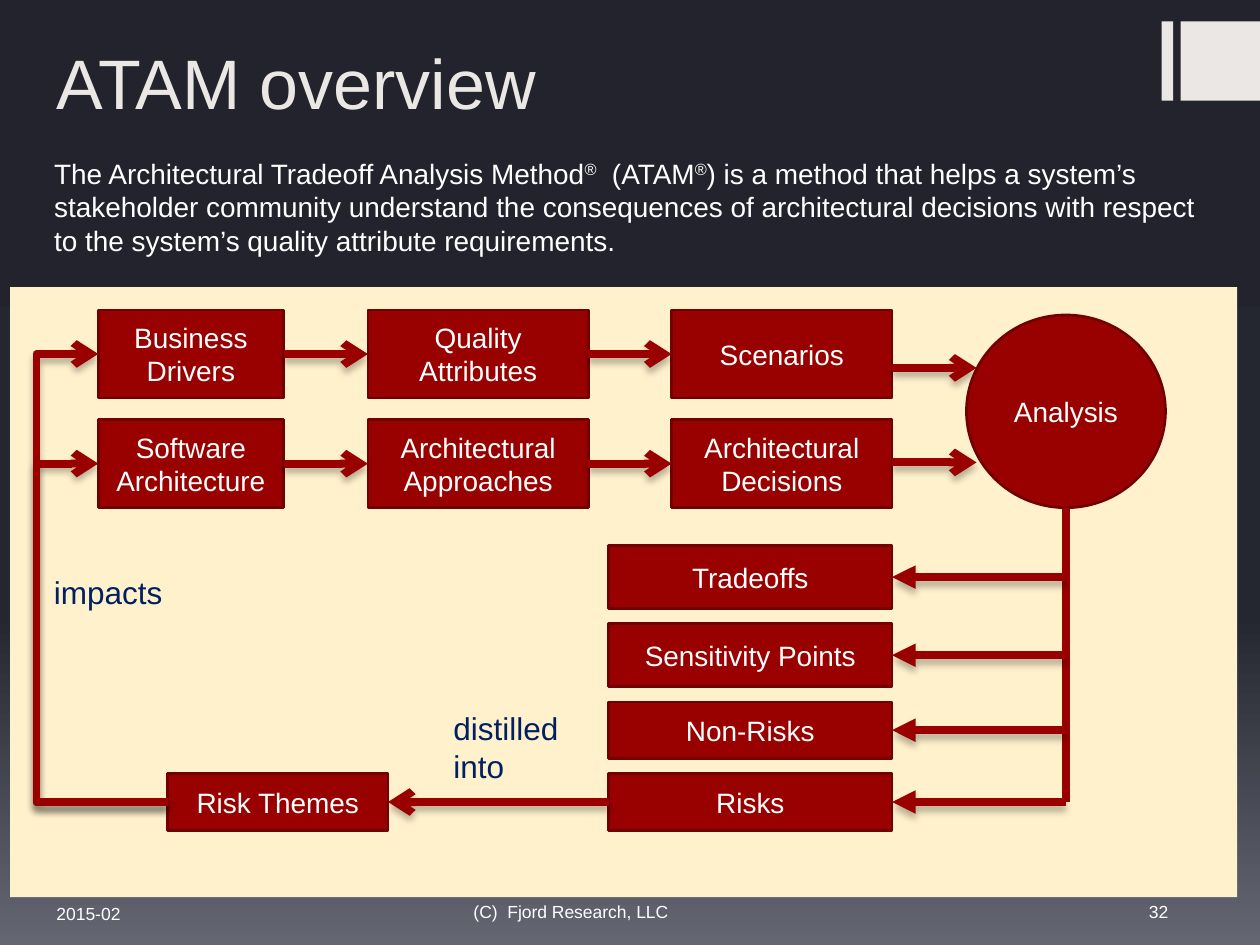
from dataclasses import dataclass

from lxml import etree
from pptx import Presentation
from pptx.dml.color import RGBColor
from pptx.enum import shapes, text
from pptx.oxml.ns import qn
from pptx.util import Inches, Pt

COLORS = {
    "light": "EAE7E4", "white": "FFFFFF", "panel": "FFF1CC", "box": "990000",
    "border": "710000", "label": "002060", "shadow": "000000",
}
BACKGROUND_STOPS = [(0, "22232C"), (65, "242630"), (100, "646671"), ]
FONT = "Arial"
TOP, LEFT, BOTTOM, RIGHT = range(4)


@dataclass
class Node:
    label: str
    left: float
    top: float
    width: float
    height: float
    kind: int = shapes.MSO_SHAPE.RECTANGLE

    @property
    def middle(self) -> float:
        return self.top + self.height / 2


@dataclass
class Label:
    words: str
    left: float
    top: float
    width: float
    height: float
    size: int
    color: str
    anchor: int = text.MSO_ANCHOR.TOP
    align: int = text.PP_ALIGN.LEFT


def rgb(name: str) -> RGBColor:
    return RGBColor.from_string(COLORS[name])


def add_xml(parent, tag: str, **attributes):
    return etree.SubElement(parent, qn(tag), {k: str(v) for k, v in attributes.items()})


def format_text(frame, size: float, color: str, align=text.PP_ALIGN.LEFT) -> None:
    frame.word_wrap = True
    for paragraph in frame.paragraphs:
        paragraph.alignment = align
        for run in paragraph.runs:
            run.font.name, run.font.size = FONT, Pt(size)
            run.font.color.rgb = rgb(color)


def place(shape, left: float, top: float, width: float, height: float) -> None:
    shape.left, shape.top = Inches(left), Inches(top)
    shape.width, shape.height = Inches(width), Inches(height)


def draw_block(slide, left: float, top: float, width: float, height: float, color: str,
               kind=shapes.MSO_SHAPE.RECTANGLE):
    block = slide.shapes.add_shape(kind, Inches(left), Inches(top), Inches(width), Inches(height))
    block.shadow.inherit = False
    block.fill.solid()
    block.fill.fore_color.rgb = rgb(color)
    block.line.fill.background()
    return block


def draw_node(slide, node: Node):
    block = draw_block(slide, node.left, node.top, node.width, node.height, "box", node.kind)
    block.line.color.rgb = rgb("border")
    block.line.width = Pt(1.5)
    block.text_frame.text = node.label
    block.text_frame.vertical_anchor = text.MSO_ANCHOR.MIDDLE
    format_text(block.text_frame, 16, "white", text.PP_ALIGN.CENTER)
    return block


def draw_label(slide, label: Label) -> None:
    box = slide.shapes.add_textbox(Inches(label.left), Inches(label.top),
                                   Inches(label.width), Inches(label.height))
    box.text_frame.text = label.words
    box.text_frame.vertical_anchor = label.anchor
    format_text(box.text_frame, label.size, label.color, label.align)


def draw_link(slide, start: tuple, end: tuple, head: str = "arrow", width: float = 4.5,
              kind=shapes.MSO_CONNECTOR.STRAIGHT, shadow: bool = True):
    link = slide.shapes.add_connector(kind, *(Inches(value) for value in start + end))
    link.line.color.rgb = rgb("box")
    link.line.width = Pt(width)
    if head:
        add_xml(link.line._get_or_add_ln(), "a:tailEnd", type=head)
    effects = add_xml(link._element.spPr, "a:effectLst")
    if shadow:
        outer = add_xml(effects, "a:outerShdw", blurRad=Pt(4), dist=Pt(3),
                        dir=5400000, rotWithShape=0)
        add_xml(add_xml(outer, "a:srgbClr", val=COLORS["shadow"]), "a:alpha", val=28000)
    return link


presentation = Presentation()
presentation.slide_width, presentation.slide_height = Inches(10), Inches(7.5)
slide = presentation.slides.add_slide(presentation.slide_layouts[1])

# Background gradient, top to bottom
background = slide.background.fill
background.gradient()
background.gradient_angle = 270
stop_list = slide._element.find(".//" + qn("a:gsLst"))
for stop in list(stop_list):
    stop_list.remove(stop)
for position, color in BACKGROUND_STOPS:
    add_xml(add_xml(stop_list, "a:gs", pos=position * 1000), "a:srgbClr", val=color)

# Corner ornament and diagram panel
draw_block(slide, 9.22, 0.17, 0.09, 0.63, "light")
draw_block(slide, 9.37, 0.17, 0.63, 0.63, "light")
draw_block(slide, 0.08, 2.28, 9.74, 4.84, "panel")

# Title
title = slide.shapes.title
place(title, 0.35, 0.16, 8.65, 0.87)
title.text_frame.text = "ATAM overview"
title.text_frame.vertical_anchor = text.MSO_ANCHOR.BOTTOM
title.text_frame.auto_size = text.MSO_AUTO_SIZE.NONE
format_text(title.text_frame, 40, "light")

# Definition, with raised registered marks
definition = slide.placeholders[1]
place(definition, 0.33, 1.19, 9.45, 1.09)
definition.text_frame.auto_size = text.MSO_AUTO_SIZE.NONE
sentence = definition.text_frame.paragraphs[0]
sentence.space_before = Pt(0)
properties = sentence._p.get_or_add_pPr()
properties.set("marL", "0")
properties.set("indent", "0")
add_xml(properties, "a:buNone")
for part in ("The Architectural Tradeoff Analysis Method", "®", "  (ATAM", "®",
             ") is a method that helps a system’s stakeholder community understand the "
             "consequences of architectural decisions with respect to the system’s quality "
             "attribute requirements."):
    run = sentence.add_run()
    run.text = part
    if part == "®":
        run.font._element.set("baseline", "30000")
format_text(definition.text_frame, 16, "white")

# Two rows of inputs leading to the analysis
columns = [(0.78, 1.47), (2.92, 1.75), (5.33, 1.75)]
input_rows = [
    (2.46, ["Business Drivers", "Quality Attributes", "Scenarios"]),
    (3.33, ["Software Architecture", "Architectural Approaches", "Architectural Decisions"]),
]
analysis = Node("Analysis", 7.67, 2.5, 1.58, 1.53, shapes.MSO_SHAPE.OVAL)
risk_themes = Node("Risk Themes", 1.33, 6.14, 1.75, 0.45)
themes_block = draw_node(slide, risk_themes)
for top, names in input_rows:
    nodes = [Node(name, left, top, width, 0.7) for name, (left, width) in zip(names, columns)]
    blocks = [draw_node(slide, node) for node in nodes]
    for source, target in zip(blocks, blocks[1:]):
        link = draw_link(slide, (0, 0), (1, 0))
        link.begin_connect(source, RIGHT)
        link.end_connect(target, LEFT)

    # Feedback from the risk themes, turning at x = 0.29
    first = nodes[0]
    feedback = draw_link(slide, (risk_themes.left, risk_themes.middle),
                         (first.left, first.middle), kind=shapes.MSO_CONNECTOR.ELBOW)
    adjustments = feedback._element.spPr.find(qn("a:prstGeom")).get_or_add_avLst()
    turn = (risk_themes.left - 0.29) / (risk_themes.left - first.left)
    add_xml(adjustments, "a:gd", name="adj1", fmla=f"val {round(turn * 100000)}")

for height in (2.92, 3.67):
    draw_link(slide, (7.08, height), (7.75, height))
draw_node(slide, analysis)

# Outputs branching off the trunk below the analysis
trunk_x = analysis.left + analysis.width / 2
outputs = [Node(name, 4.83, top, 2.25, height) for name, top, height in (
    ("Tradeoffs", 4.33, 0.5), ("Sensitivity Points", 4.95, 0.5),
    ("Non-Risks", 5.57, 0.45), ("Risks", 6.14, 0.45))]
draw_link(slide, (trunk_x, analysis.top + analysis.height), (trunk_x, outputs[-1].middle),
          head="", width=4.25, shadow=False)
for node in outputs:
    output_block = draw_node(slide, node)
    branch = draw_link(slide, (trunk_x, node.middle), (node.left + node.width, node.middle),
                       head="triangle")
    branch.end_connect(output_block, RIGHT)

# Risks distilled into themes
distilling = draw_link(slide, (4.83, 6.36), (3.08, 6.36))
distilling.begin_connect(output_block, LEFT)
distilling.end_connect(themes_block, RIGHT)

# Link captions and footer
for label in (
    Label("distilled into", 3.5, 5.58, 1.42, 0.71, 18, "label"),
    Label("impacts", 0.33, 4.5, 1.42, 0.4, 18, "label"),
    Label("2015-02", 0.35, 7.05, 1.3, 0.33, 10, "white", text.MSO_ANCHOR.BOTTOM),
    Label("(C)  Fjord Research, LLC", 3.66, 7.04, 2.46, 0.33, 10, "white",
          text.MSO_ANCHOR.BOTTOM),
    Label("32", 8.34, 7.04, 1.03, 0.33, 10, "white", text.MSO_ANCHOR.BOTTOM,
          text.PP_ALIGN.RIGHT),
):
    draw_label(slide, label)

presentation.save("out.pptx")
